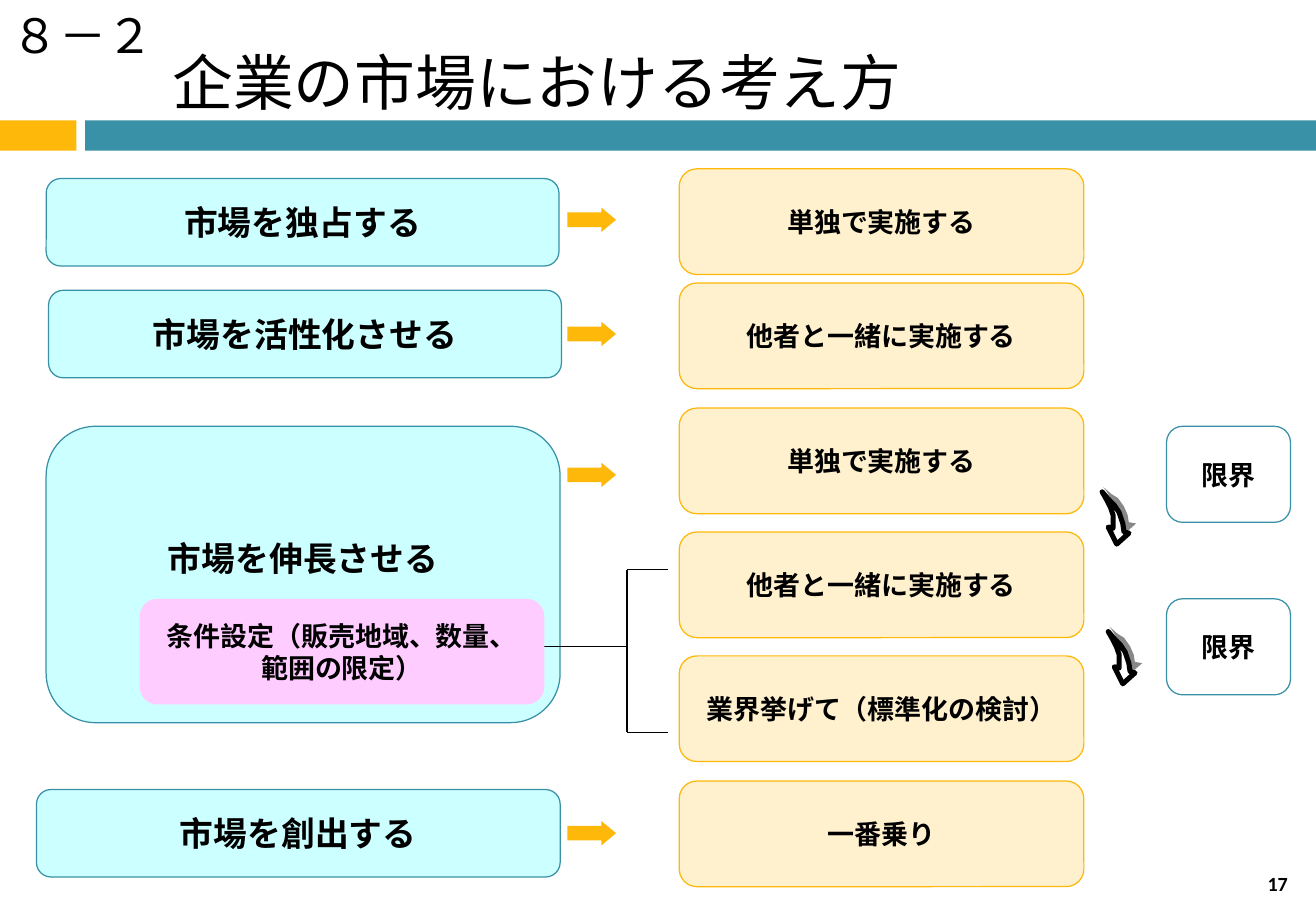
import lxml.etree
import pptx
import pptx.dml.color
import pptx.enum.shapes
import pptx.enum.text
import pptx.oxml.ns
import pptx.util

PX = 9144
SHAPES = pptx.enum.shapes.MSO_SHAPE
ANCHOR = pptx.enum.text.MSO_ANCHOR
ALIGN = pptx.enum.text.PP_ALIGN
GOTHIC = "Noto Sans CJK JP"
TEAL, AMBER, CREAM = "3891A7", "FEB80A", "FFF1CE"
CYAN, PINK, BLACK, WHITE, GREY = "CCFFFF", "FFCCFF", "000000", "FFFFFF", "888888"

MARKETS = [
    ((38, 147, 422, 72), "市場を独占する", None),
    ((40, 239, 422, 72), "市場を活性化させる", None),
    ((38, 351, 423, 244), "市場を伸長させる", 80),
    ((30, 650, 431, 72), "市場を創出する", None),
]
APPROACHES = [
    (139, "単独で実施する"),
    (233, "他者と一緒に実施する"),
    (336, "単独で実施する"),
    (438, "他者と一緒に実施する"),
    (540, "業界挙げて（標準化の検討）"),
    (643, "一番乗り"),
]
CURVE_SHADOW = [
    (23, 29), (22, 23), (19, 16), (14, 9), (9, 6), (2, 0), (5, 4), (8, 9),
    (11, 18), (12, 23), (12, 25), (8, 27), (15, 40), (20, 38), (29, 30),
]
CURVE_ARROW = [
    (19, 37), (18, 30), (15, 21), (11, 15), (7, 11), (1, 4), (5, 11), (8, 17),
    (10, 23), (10, 28), (10, 34), (6, 33), (13, 47), (23, 38),
]


def rgb(value):
    """Turn a hex string into a colour."""
    return pptx.dml.color.RGBColor.from_string(value)


def lengths(*values):
    """Turn px into EMU."""
    return [pptx.util.Emu(value * PX) for value in values]


def paint(shape, fill, line=None, width=0.75):
    """Set the fill and outline of a shape and drop its shadow."""
    shape.shadow.inherit = False
    shape.fill.solid()
    shape.fill.fore_color.rgb = rgb(fill)
    if line:
        shape.line.color.rgb = rgb(line)
        shape.line.width = pptx.util.Pt(width)
    else:
        shape.line.fill.background()


def write(shape, text, size, font_name, bold=False, align=ALIGN.CENTER, anchor=ANCHOR.MIDDLE):
    """Write text into a shape, one paragraph per line."""
    frame = shape.text_frame
    frame.text = text
    frame.vertical_anchor = anchor
    for paragraph in frame.paragraphs:
        paragraph.alignment = align
        font = paragraph.font
        font.size = pptx.util.Pt(size)
        font.bold = bold
        font.color.rgb = rgb(BLACK)
        font.name = font_name
        properties = paragraph._p.find(".//" + pptx.oxml.ns.qn("a:defRPr"))
        east_asian = lxml.etree.SubElement(properties, pptx.oxml.ns.qn("a:ea"))
        east_asian.set("typeface", GOTHIC)


def add_label(slide, box, text, size, font_name, **style):
    """Add a wrapping text box."""
    shape = slide.shapes.add_textbox(*lengths(*box))
    shape.text_frame.word_wrap = True
    write(shape, text, size, font_name, **style)


def add_card(slide, box, text, size, fill, line=None, text_top=None):
    """Add a rounded box with a bold label, centred or starting at text_top."""
    shape = slide.shapes.add_shape(SHAPES.ROUNDED_RECTANGLE, *lengths(*box))
    paint(shape, fill, line)
    frame = shape.text_frame
    frame.word_wrap = False
    frame.margin_left, frame.margin_right = lengths(7, 7)
    frame.margin_top, frame.margin_bottom = lengths(text_top or 4, 4)
    write(shape, text, size, GOTHIC, bold=True, anchor=ANCHOR.TOP if text_top else ANCHOR.MIDDLE)


def add_header(slide, box):
    """Add the section number, the title and the two-colour band."""
    left, top, width, height = box
    for offset, band_width, fill in ((0, 63, AMBER), (70, width - 70, TEAL)):
        band = slide.shapes.add_shape(
            SHAPES.RECTANGLE, *lengths(left + offset, top + height - 25, band_width, 25))
        paint(band, fill)
    add_label(slide, (left + 132, top + 13, 940, 108), "企業の市場における考え方", 36, "Calibri",
              align=ALIGN.LEFT)
    add_label(slide, (left, top, 243, 57), "８－２", 28, "Arial", align=ALIGN.LEFT, anchor=ANCHOR.TOP)


def add_markets(slide):
    """Add the market goals on the left."""
    for box, text, text_top in MARKETS:
        add_card(slide, box, text, 20, CYAN, TEAL, text_top)


def add_approaches(slide, left, width):
    """Add the column of approaches."""
    for top, text in APPROACHES:
        add_card(slide, (left, top, width, 87), text, 16, CREAM, AMBER)


def add_arrows(slide, left, tops):
    """Add the block arrows from goals to approaches."""
    for top in tops:
        arrow = slide.shapes.add_shape(SHAPES.RIGHT_ARROW, *lengths(left, top, 40, 20))
        arrow.adjustments[0] = arrow.adjustments[1] = 0.6
        paint(arrow, AMBER)


def add_bracket(slide, box, stem_left, stem_y):
    """Add a bracket that opens to the right, with a stem on its left."""
    left, top, width, height = box
    right, bottom = left + width, top + height
    for ends in (
        (right, bottom, left, bottom),
        (right, top, left, top),
        (left, top, left, bottom),
        (left, stem_y, stem_left, stem_y),
    ):
        connector = slide.shapes.add_connector(
            pptx.enum.shapes.MSO_CONNECTOR.STRAIGHT, *lengths(*ends))
        connector.line.color.rgb = rgb(BLACK)
        connector.line.width = pptx.util.Pt(0.75)
        lxml.etree.SubElement(connector._element.spPr, pptx.oxml.ns.qn("a:effectLst"))


def add_curved_arrow(slide, left, top):
    """Add a curved arrow with its grey shadow."""
    for outline, fill, line in ((CURVE_SHADOW, GREY, None), (CURVE_ARROW, WHITE, BLACK)):
        points = [lengths(left + x, top + y) for x, y in outline]
        builder = slide.shapes.build_freeform(*points[0])
        builder.add_line_segments(points[1:], close=True)
        paint(builder.convert_to_shape(), fill, line, 3)


def add_limits(slide, left, tops):
    """Add the limit boxes on the right."""
    for top in tops:
        add_card(slide, (left, top, 102, 79), "限界", 16, WHITE, TEAL)


def main():
    """Build and save the slide."""
    presentation = pptx.Presentation()
    presentation.slide_width, presentation.slide_height = lengths(1083, 750)
    slide = presentation.slides.add_slide(presentation.slide_layouts[6])
    add_header(slide, (0, 0, 1083, 124))
    add_arrows(slide, 467, (171, 265, 381, 676))
    add_markets(slide)
    add_approaches(slide, 559, 333)
    add_bracket(slide, (516, 469, 34, 134), 439, 532)
    add_card(slide, (115, 493, 333, 87), "条件設定（販売地域、数量、\n範囲の限定）", 16, PINK)
    for left, top in ((906, 401), (911, 516)):
        add_curved_arrow(slide, left, top)
    add_limits(slide, 960, (351, 493))
    add_label(slide, (1020, 714, 63, 27), "17", 11.9, "Calibri", bold=True)
    presentation.save("out.pptx")


if __name__ == "__main__":
    main()
